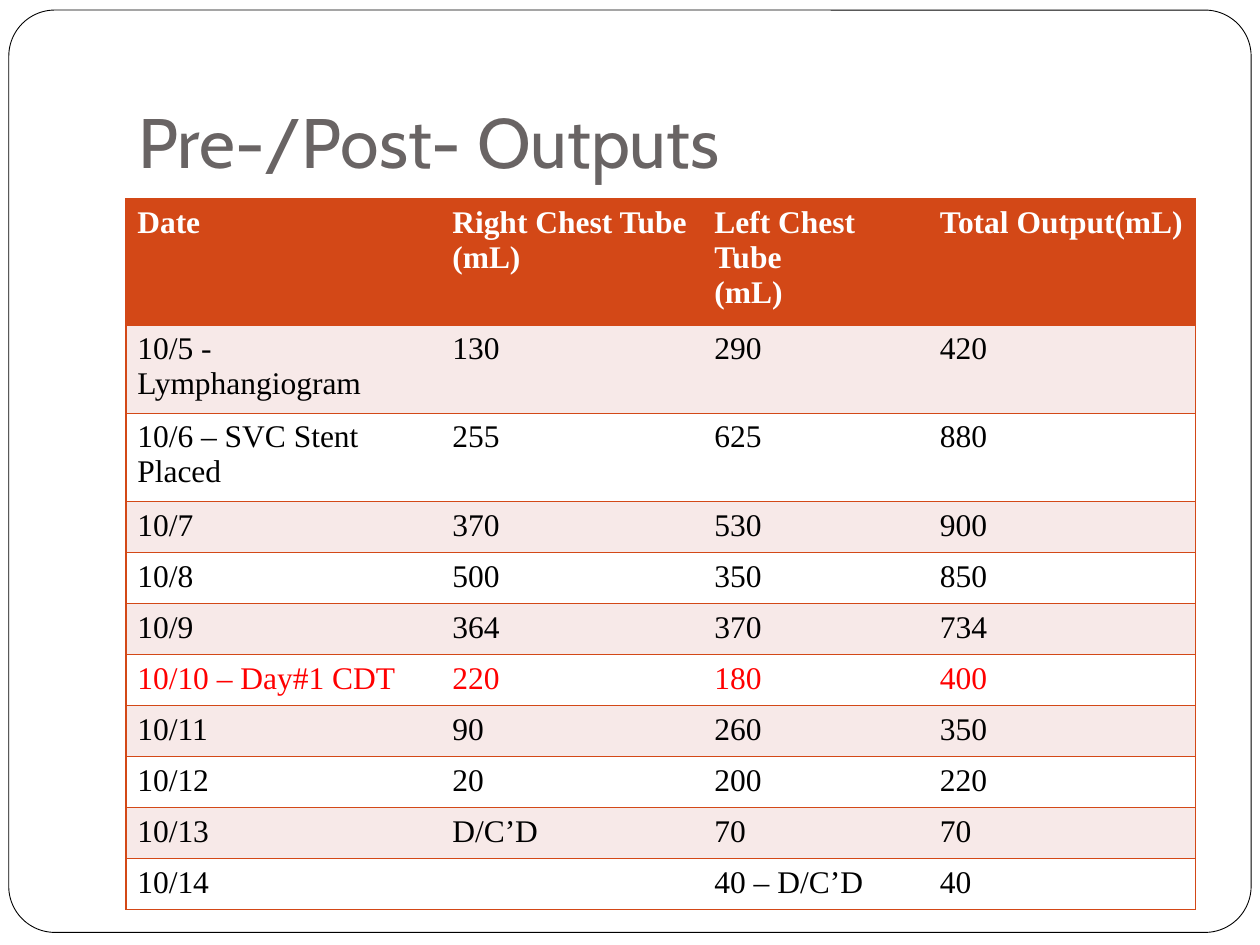
from dataclasses import dataclass

from lxml.etree import SubElement
from pptx import Presentation
from pptx.dml.color import RGBColor as Color
from pptx.enum.shapes import MSO_SHAPE as Shape
from pptx.enum.text import MSO_ANCHOR as Anchor
from pptx.oxml.ns import qn
from pptx.util import Inches, Pt


@dataclass(frozen=True)
class Theme:
    """Hold the colours, fonts and type sizes."""
    paper: str = "FFFFFF"
    ink: str = "000000"
    title: str = "696464"
    accent: str = "D34817"
    band: str = "F7E9E8"
    alert: str = "FF0000"
    title_font: str = "Cabin"
    table_font: str = "Times New Roman"
    title_size: int = 40
    table_size: int = 18


THEME = Theme()
HEADER = ["Date", "Right Chest Tube (mL)", "Left Chest Tube\n(mL)", "Total Output(mL)"]
OUTPUTS = [
    ["10/5 - Lymphangiogram", "130", "290", "420"],
    ["10/6 – SVC Stent Placed", "255", "625", "880"],
    ["10/7", "370", "530", "900"],
    ["10/8", "500", "350", "850"],
    ["10/9", "364", "370", "734"],
    ["10/10 – Day#1 CDT", "220", "180", "400"],
    ["10/11", "90", "260", "350"],
    ["10/12", "20", "200", "220"],
    ["10/13", "D/C’D", "70", "70"],
    ["10/14", "", "40 – D/C’D", "40"],
]
ALERT_ROW = 6
COLUMN_WIDTHS = [2.5, 2.08, 1.79, 2.12]
TABLE_HEIGHT, HEADER_HEIGHT = 4.75, 0.7


def apply_format(target, values):
    """Set each attribute named in a dict of format values."""
    for name, value in values.items():
        setattr(target, name, value)


def style_text(frame, font, size, color, bold=False):
    """Give every paragraph in a frame one font."""
    for para in frame.paragraphs:
        apply_format(para.font, {"name": font, "size": Pt(size), "bold": bold})
        para.font.color.rgb = Color.from_string(color)


def add_frame(page):
    """Draw the thin rounded outline around the page."""
    outline = page.shapes.add_shape(
        Shape.ROUNDED_RECTANGLE, Inches(0.07), Inches(0.08), Inches(9.86), Inches(7.32))
    outline.adjustments[0] = 0.05
    outline.shadow.inherit = False
    outline.fill.solid()
    outline.fill.fore_color.rgb = Color.from_string(THEME.paper)
    outline.line.color.rgb = Color.from_string(THEME.ink)
    outline.line.width = Pt(0.5)


def add_title(page, text):
    """Place the title, resting on the bottom of its box."""
    box = page.shapes.add_textbox(Inches(1), Inches(0.3), Inches(8.5), Inches(1.25))
    apply_format(box.text_frame, {
        "text": text, "word_wrap": True, "vertical_anchor": Anchor.BOTTOM,
        "margin_bottom": Inches(0.1)})
    style_text(box.text_frame, THEME.title_font, THEME.title_size, THEME.title)


def set_borders(cell, visible):
    """Rule the visible sides of a cell and clear the others."""
    properties = cell._tc.get_or_add_tcPr()
    for position, side in enumerate("LRTB"):
        line = SubElement(properties, qn(f"a:ln{side}"), w=str(Pt(1)))
        if side in visible:
            fill = SubElement(line, qn("a:solidFill"))
            SubElement(fill, qn("a:srgbClr"), val=THEME.accent)
        else:
            SubElement(line, qn("a:noFill"))
        properties.insert(position, line)


def row_style(row):
    """Return the fill, text colour and weight of a row."""
    if row == 0:
        return THEME.accent, THEME.paper, True
    fill = THEME.band if row % 2 else THEME.paper
    return fill, THEME.alert if row == ALERT_ROW else THEME.ink, False


def fill_cell(cell, text, style, sides):
    """Write and format one table cell."""
    fill, color, bold = style
    apply_format(cell, {
        "text": text, "margin_left": Inches(0.09), "margin_right": Inches(0.09)})
    cell.fill.solid()
    cell.fill.fore_color.rgb = Color.from_string(fill)
    style_text(cell.text_frame, THEME.table_font, THEME.table_size, color, bold)
    set_borders(cell, sides)


def add_output_table(page):
    """Build the banded table of daily outputs."""
    rows = [HEADER, *OUTPUTS]
    table = page.shapes.add_table(
        len(rows), len(HEADER), Inches(1), Inches(1.58),
        Inches(sum(COLUMN_WIDTHS)), Inches(TABLE_HEIGHT)).table
    for column, width in zip(table.columns, COLUMN_WIDTHS):
        column.width = Inches(width)
    body_height = (TABLE_HEIGHT - HEADER_HEIGHT) / len(OUTPUTS)
    outer_sides = {0: "LTB", len(HEADER) - 1: "RTB"}
    for r, texts in enumerate(rows):
        table.rows[r].height = Inches(body_height if r else HEADER_HEIGHT)
        for c, text in enumerate(texts):
            fill_cell(table.cell(r, c), text, row_style(r), outer_sides.get(c, "TB"))


def main():
    """Build and save the deck."""
    deck = Presentation()
    apply_format(deck, {"slide_width": Inches(10), "slide_height": Inches(7.5)})
    page = deck.slides.add_slide(deck.slide_layouts[6])
    add_frame(page)
    add_title(page, "Pre-/Post- Outputs")
    add_output_table(page)
    deck.save("out.pptx")


if __name__ == "__main__":
    main()
